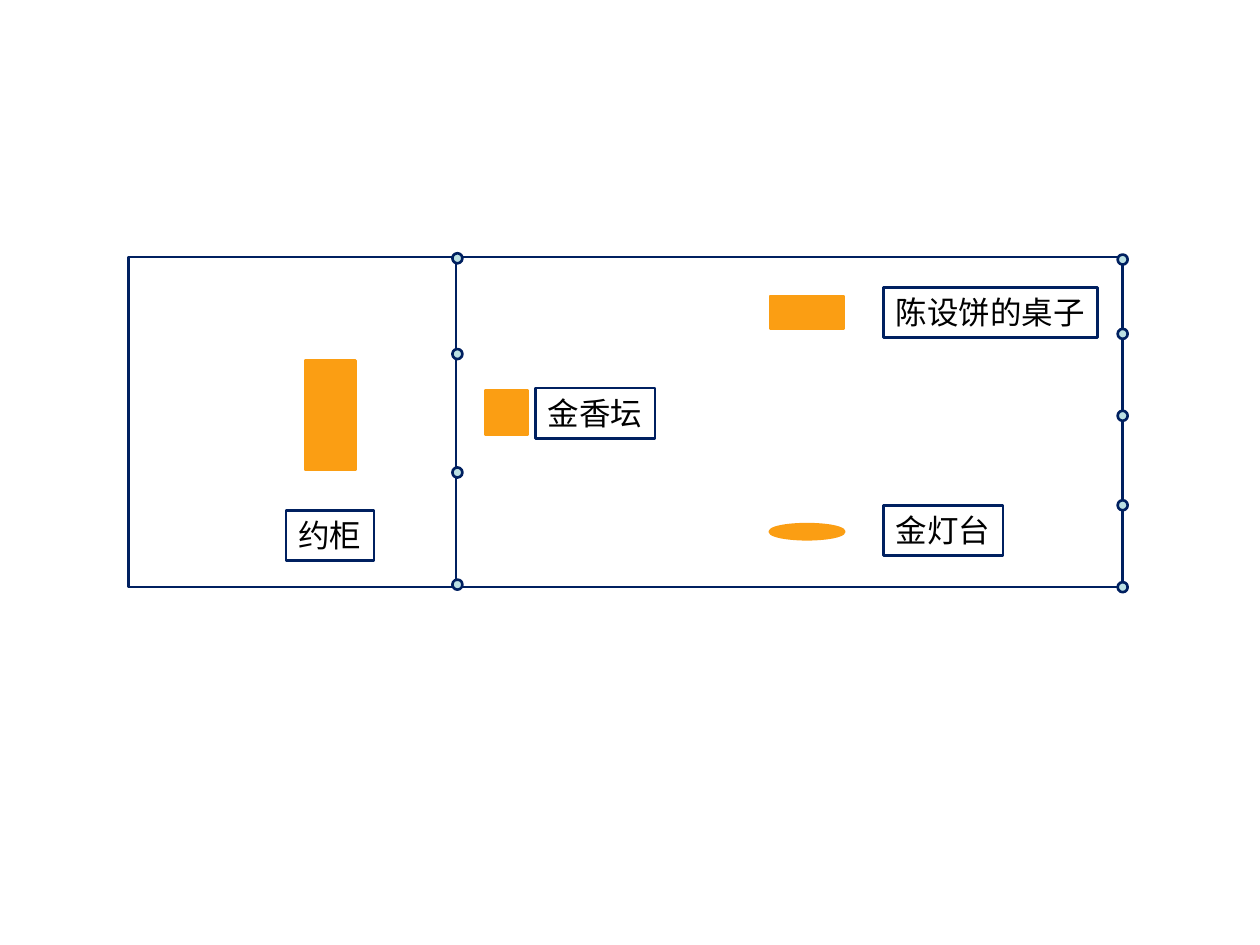
import dataclasses

import pptx
import pptx.dml.color
import pptx.enum.shapes
import pptx.enum.text
import pptx.util

Inches = pptx.util.Inches
RECTANGLE = pptx.enum.shapes.MSO_SHAPE.RECTANGLE
OVAL = pptx.enum.shapes.MSO_SHAPE.OVAL


@dataclasses.dataclass(frozen=True)
class Theme:
    outline: str = "002060"
    gold: str = "FB9E13"
    pillar: str = "BBE0E3"
    text: str = "000000"
    font: str = "Arial"
    text_size: float = 18
    line_width: float = 1.5
    pillar_size: float = 0.08
    label_height: float = 0.4


class FloorPlan:
    def __init__(self, slide, theme):
        self.slide = slide
        self.theme = theme

    def color(self, value):
        return pptx.dml.color.RGBColor.from_string(value)

    def outline(self, shape, color):
        shape.line.color.rgb = self.color(color)
        shape.line.width = pptx.util.Pt(self.theme.line_width)

    def shape(self, kind, left, top, width, height, line, fill=None):
        shape = self.slide.shapes.add_shape(
            kind, Inches(left), Inches(top), Inches(width), Inches(height))
        shape.shadow.inherit = False
        if fill:
            shape.fill.solid()
            shape.fill.fore_color.rgb = self.color(fill)
        else:
            shape.fill.background()
        self.outline(shape, line)

    def room(self, left, top, width, height):
        self.shape(RECTANGLE, left, top, width, height, self.theme.outline)

    def furnishing(self, kind, left, top, width, height):
        gold = self.theme.gold
        self.shape(kind, left, top, width, height, gold, gold)

    def pillar(self, left, top):
        size = self.theme.pillar_size
        self.shape(OVAL, left, top, size, size, self.theme.outline, self.theme.pillar)

    def label(self, text, left, top, width):
        box = self.slide.shapes.add_textbox(
            Inches(left), Inches(top), Inches(width), Inches(self.theme.label_height))
        self.outline(box, self.theme.outline)
        frame = box.text_frame
        frame.text = text
        frame.word_wrap = False
        frame.auto_size = pptx.enum.text.MSO_AUTO_SIZE.SHAPE_TO_FIT_TEXT
        font = frame.paragraphs[0].runs[0].font
        font.name = self.theme.font
        font.size = pptx.util.Pt(self.theme.text_size)
        font.color.rgb = self.color(self.theme.text)


def main():
    presentation = pptx.Presentation()
    presentation.slide_width = Inches(10)
    presentation.slide_height = Inches(7.5)
    slide = presentation.slides.add_slide(presentation.slide_layouts[6])
    plan = FloorPlan(slide, Theme())

    room_top, room_height = 2.04, 2.62
    for left, width in ((1.02, 2.6), (3.62, 5.29)):
        plan.room(left, room_top, width, room_height)

    for furnishing in (
        (RECTANGLE, 6.11, 2.35, 0.59, 0.26),
        (RECTANGLE, 2.42, 2.86, 0.4, 0.87),
        (OVAL, 6.11, 4.16, 0.59, 0.12),
        (RECTANGLE, 3.85, 3.1, 0.34, 0.35),
    ):
        plan.furnishing(*furnishing)

    pillar_rows = {
        3.59: (2.01, 2.77, 3.71, 4.6),
        8.87: (2.02, 2.61, 3.26, 3.97, 4.62),
    }
    for left, tops in pillar_rows.items():
        for top in tops:
            plan.pillar(left, top)

    for label in (
        ("陈设饼的桌子", 7.01, 2.28, 1.7),
        ("金灯台", 7.01, 4.01, 0.95),
        ("金香坛", 4.25, 3.08, 0.95),
        ("约柜", 2.27, 4.05, 0.7),
    ):
        plan.label(*label)

    presentation.save("out.pptx")


if __name__ == "__main__":
    main()
